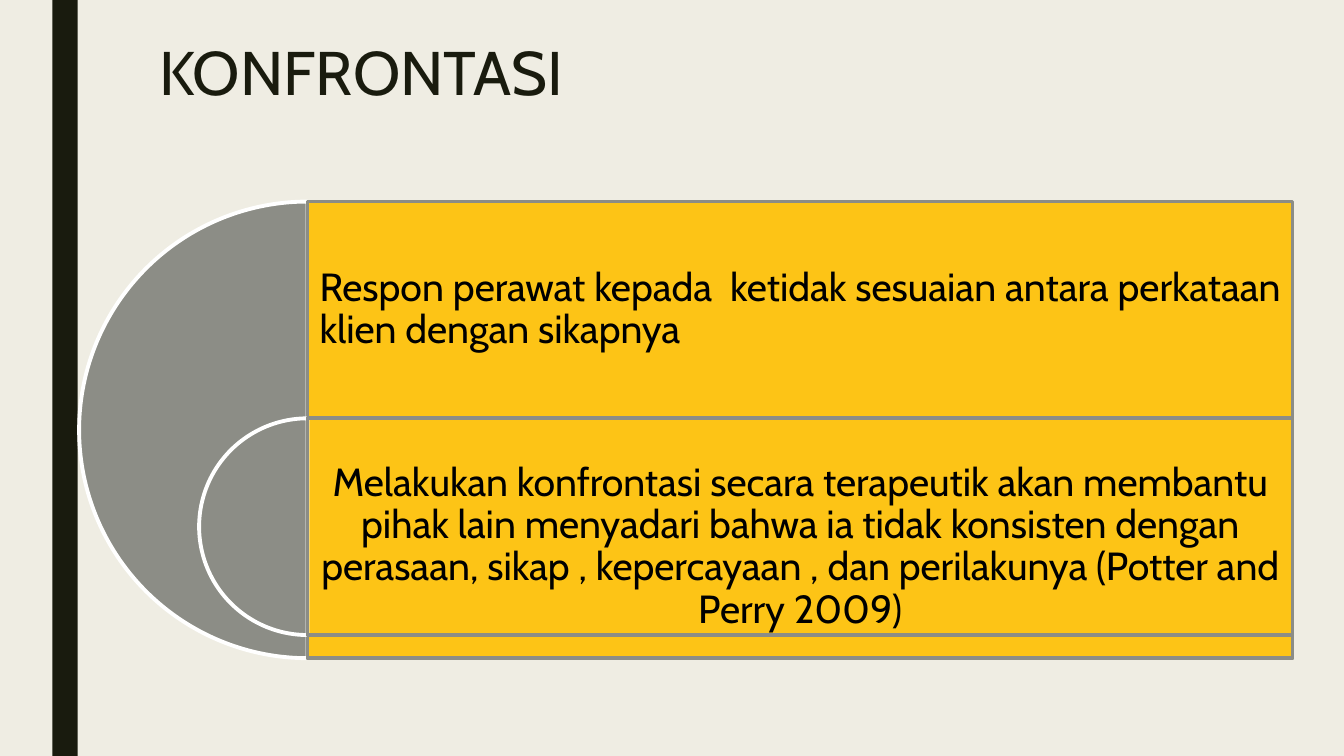
from dataclasses import dataclass

from lxml import etree
from pptx import Presentation
from pptx.dml import color
from pptx.enum import shapes, text
from pptx.oxml import ns
from pptx.util import Inches, Pt


@dataclass(frozen=True)
class Theme:
    background: str = "EFEDE3"
    dark: str = "191B0E"
    gray: str = "8C8D86"
    gold: str = "FFC000"
    white: str = "FFFFFF"
    black: str = "000000"
    font: str = "Cabin"
    title_size: float = 44
    body_size: float = 28
    outline: float = 2.75
    gold_opacity: int = 90


@dataclass(frozen=True)
class Frame:
    left: float
    top: float
    width: float
    height: float


@dataclass(frozen=True)
class Statement:
    words: str
    align: text.PP_ALIGN
    side_inset: float
    top_inset: float
    bottom_inset: float


THEME = Theme()
PANEL_LEFT, PANEL_TOP, PANEL_WIDTH = 3.05, 2, 9.77
OUTER_SIZE, ROW_HEIGHT = 4.53, 2.15
STATEMENTS = [
    Statement(
        "Respon perawat kepada  ketidak sesuaian antara perkataan klien dengan sikapnya",
        text.PP_ALIGN.JUSTIFY, 0.12, 0.12, 0.12,
    ),
    Statement(
        "Melakukan konfrontasi secara terapeutik akan membantu pihak lain menyadari "
        "bahwa ia tidak konsisten dengan perasaan, sikap , kepercayaan , dan "
        "perilakunya (Potter and Perry 2009)",
        text.PP_ALIGN.CENTER, 0.08, 0.4, 0,
    ),
]


def rgb(value: str) -> color.RGBColor:
    return color.RGBColor.from_string(value)


def add_block(page, kind, frame: Frame, fill: str | None, line: str | None):
    block = page.shapes.add_shape(
        kind, Inches(frame.left), Inches(frame.top), Inches(frame.width), Inches(frame.height)
    )
    block.shadow.inherit = False
    if fill:
        block.fill.solid()
        block.fill.fore_color.rgb = rgb(fill)
    else:
        block.fill.background()
    if line:
        block.line.color.rgb = rgb(line)
        block.line.width = Pt(THEME.outline)
    else:
        block.line.fill.background()
    return block


def add_half_circle(page, top: float, size: float) -> None:
    frame = Frame(PANEL_LEFT - size / 2, top, size, size)
    pie = add_block(page, shapes.MSO_SHAPE.PIE, frame, THEME.gray, THEME.white)
    pie.adjustments[0] = 54
    pie.adjustments[1] = 162


def add_panel(page, top: float, height: float, fill: str | None) -> None:
    frame = Frame(PANEL_LEFT, top, PANEL_WIDTH, height)
    panel = add_block(page, shapes.MSO_SHAPE.RECTANGLE, frame, fill, THEME.gray)
    if fill:
        tint = panel.fill._xPr.find(".//" + ns.qn("a:srgbClr"))
        opacity = etree.SubElement(tint, ns.qn("a:alpha"))
        opacity.set("val", str(THEME.gold_opacity * 1000))


def add_text(page, frame: Frame, words: str, size: float, ink: str,
             align: text.PP_ALIGN, anchor: text.MSO_ANCHOR):
    box = page.shapes.add_textbox(
        Inches(frame.left), Inches(frame.top), Inches(frame.width), Inches(frame.height)
    )
    body = box.text_frame
    body.text = words
    body.word_wrap = True
    body.vertical_anchor = anchor
    para = body.paragraphs[0]
    para.alignment = align
    para.line_spacing = 0.9
    span = para.runs[0]
    span.font.name = THEME.font
    span.font.size = Pt(size)
    span.font.color.rgb = rgb(ink)
    return body


def add_statement(page, top: float, statement: Statement) -> None:
    frame = Frame(PANEL_LEFT, top, PANEL_WIDTH, ROW_HEIGHT)
    body = add_text(page, frame, statement.words, THEME.body_size, THEME.black,
                    statement.align, text.MSO_ANCHOR.MIDDLE)
    body.margin_left = body.margin_right = Inches(statement.side_inset)
    body.margin_top = Inches(statement.top_inset)
    body.margin_bottom = Inches(statement.bottom_inset)


def main() -> None:
    deck = Presentation()
    deck.slide_width, deck.slide_height = Inches(13.33), Inches(7.5)
    page = deck.slides.add_slide(deck.slide_layouts[6])
    page.background.fill.solid()
    page.background.fill.fore_color.rgb = rgb(THEME.background)

    add_block(page, shapes.MSO_SHAPE.RECTANGLE, Frame(0.52, 0, 0.25, 7.5), THEME.dark, None)
    add_text(page, Frame(1.48, 0.37, 9.52, 1.32), "KONFRONTASI", THEME.title_size,
             THEME.dark, text.PP_ALIGN.LEFT, text.MSO_ANCHOR.TOP)

    levels = [(OUTER_SIZE, THEME.gold), (ROW_HEIGHT, None)]
    for row, ((size, fill), statement) in enumerate(zip(levels, STATEMENTS)):
        top = PANEL_TOP + row * ROW_HEIGHT
        add_half_circle(page, top, size)
        add_panel(page, top, size, fill)
        add_statement(page, top, statement)

    deck.save("out.pptx")


if __name__ == "__main__":
    main()
